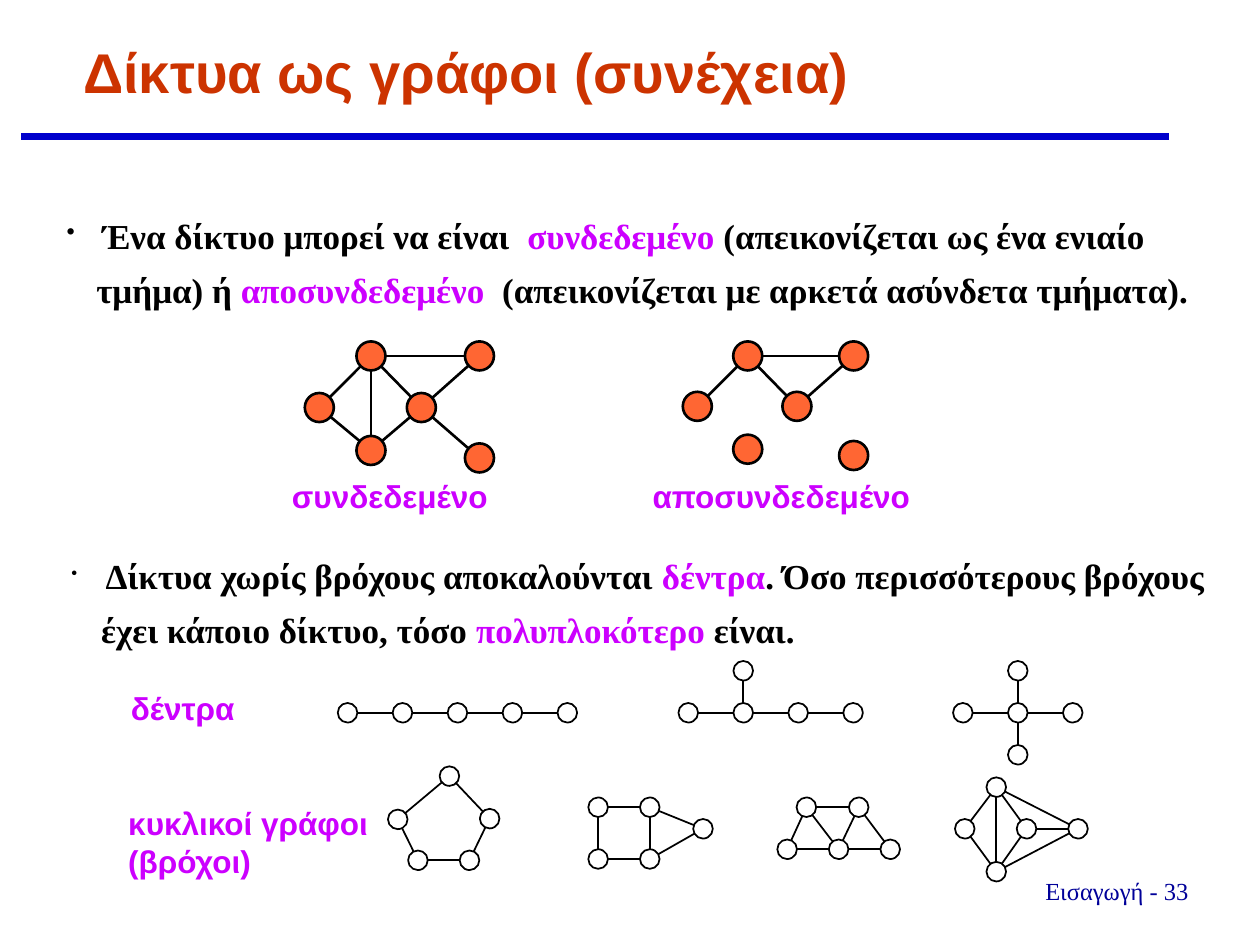
"""Build the slide on networks as graphs."""
import math
from dataclasses import dataclass
from typing import Optional

import pptx
import pptx.dml.color
import pptx.enum.shapes
import pptx.enum.text
import pptx.oxml.ns
import pptx.util
from lxml import etree

Pt = pptx.util.Pt
ALIGN = pptx.enum.text.PP_ALIGN
ANCHOR = pptx.enum.text.MSO_ANCHOR
AUTO_SIZE = pptx.enum.text.MSO_AUTO_SIZE

BLACK, WHITE, ORANGE, MAGENTA = "000000", "FFFFFF", "FF6633", "CC00FF"
SANS, SERIF = "Arial", "Times New Roman"


@dataclass(frozen=True)
class NodeStyle:
    """Look of a graph's nodes and edges."""
    diameter: float
    fill: str
    weight: float


@dataclass(frozen=True)
class Graph:
    """Node centres in points, and edges as pairs of node indexes."""
    style: NodeStyle
    nodes: list[tuple[float, float]]
    edges: list[tuple[int, int]]


@dataclass(frozen=True)
class Caption:
    """A short bold caption beside or below graphs."""
    box: tuple[float, float, float, float]
    lines: str


@dataclass(frozen=True)
class Statement:
    """A bulleted sentence whose phrases alternate black and highlighted."""
    box: tuple[float, float, float, float]
    lead: float
    phrases: list[str]


LARGE = NodeStyle(16.6, ORANGE, 1.5)
SMALL = NodeStyle(11.2, WHITE, 1)
TREE_STEP, BRANCH_STEP, TREE_Y = 31.4, 24, 407.3


def tree(left: float, length: int, branches: list[tuple[int, int]]) -> Graph:
    """Lay out an even row of nodes with branches given as (column, direction)."""
    row = [(left + TREE_STEP * i, TREE_Y) for i in range(length)]
    tips = [(row[column][0], TREE_Y + BRANCH_STEP * way) for column, way in branches]
    chain = [(i, i + 1) for i in range(length - 1)]
    stems = [(column, length + i) for i, (column, _) in enumerate(branches)]
    return Graph(SMALL, row + tips, chain + stems)


CONNECTED = Graph(
    LARGE,
    [(182.5, 232.9), (240.8, 232.9), (212, 203.4), (212, 257.4), (274, 261.7), (274, 203.4)],
    [(0, 2), (2, 5), (0, 3), (2, 3), (3, 1), (2, 1), (1, 5), (1, 4)])
DISCONNECTED = Graph(
    LARGE,
    [(398.5, 232.2), (455.4, 232.2), (427.3, 203.4), (427.3, 256.7), (487.8, 260.3),
     (487.8, 203.4)],
    [(0, 2), (2, 5), (2, 1), (1, 5)])
PENTAGON = Graph(
    SMALL,
    [(238.8, 491.6), (268.3, 491.6), (279.8, 467.8), (256.8, 443.5), (227.3, 468.2)],
    [(i, (i + 1) % 5) for i in range(5)])
HOUSE = Graph(
    SMALL,
    [(341.8, 461.3), (341.8, 490.9), (371.3, 490.9), (371.3, 461.3), (401.7, 473.6)],
    [(0, 1), (1, 2), (2, 3), (3, 0), (3, 4), (2, 4)])
TRAPEZOID = Graph(
    SMALL,
    [(449.8, 485.3), (479.2, 485.3), (508.7, 485.3), (460.8, 461.3), (490.7, 461.3)],
    [(0, 1), (1, 2), (3, 4), (3, 0), (3, 1), (4, 1), (4, 2)])
KITE = Graph(
    SMALL,
    [(551.3, 473.6), (586.6, 473.6), (616, 473.6), (569.3, 449.8), (569.3, 498.1)],
    [(1, 2), (3, 1), (4, 0), (1, 4), (3, 2), (4, 2), (3, 4), (3, 0)])
TREES = [tree(198.6, 5, []), tree(393.3, 4, [(1, -1)]), tree(550.2, 3, [(1, -1), (1, 1)])]
GRAPHS = [CONNECTED, DISCONNECTED, *TREES, PENTAGON, HOUSE, TRAPEZOID, KITE]

CAPTIONS = [
    Caption((159.8, 269.3, 127.4, 28.8), "συνδεδεμένο"),
    Caption((365.8, 269.3, 163.4, 28.8), "αποσυνδεδεμένο"),
    Caption((67.7, 390.2, 77.8, 28.8), "δέντρα"),
    Caption((66.2, 455.8, 152.6, 51.1), "κυκλικοί γράφοι\n(βρόχοι)"),
]
STATEMENTS = [
    Statement((31, 111.6, 689, 70.6), 14, [
        "Ένα δίκτυο μπορεί να είναι  ", "συνδεδεμένο",
        " (απεικονίζεται ως ένα ενιαίο τμήμα) ή ", "αποσυνδεδεμένο  ",
        "(απεικονίζεται με αρκετά ασύνδετα τμήματα)."]),
    Statement((33.8, 306, 669.6, 70.6), 10, [
        "Δίκτυα χωρίς βρόχους αποκαλούνται ", "δέντρα",
        ". Όσο περισσότερους βρόχους έχει κάποιο δίκτυο, τόσο ", "πολυπλοκότερο ",
        "είναι."]),
]


def color(value: str) -> pptx.dml.color.RGBColor:
    """Turn a hex string into a colour."""
    return pptx.dml.color.RGBColor.from_string(value)


def style_run(run, size: float, face: str, shade: str, bold: bool = False) -> None:
    """Format one run."""
    run.font.size, run.font.name, run.font.bold = Pt(size), face, bold
    run.font.color.rgb = color(shade)


def add_edge(slide, start: tuple[float, float], end: tuple[float, float],
             shade: str, weight: float) -> None:
    """Draw a straight line without shadow."""
    edge = slide.shapes.add_connector(
        pptx.enum.shapes.MSO_CONNECTOR.STRAIGHT, *map(Pt, start + end))
    edge.line.color.rgb = color(shade)
    edge.line.width = Pt(weight)
    etree.SubElement(edge._element.spPr, pptx.oxml.ns.qn("a:effectLst"))


def add_graph(slide, graph: Graph) -> None:
    """Draw edges from rim to rim, and the nodes."""
    style = graph.style
    radius = style.diameter / 2
    for first, second in graph.edges:
        (x1, y1), (x2, y2) = graph.nodes[first], graph.nodes[second]
        reach = radius / math.hypot(x2 - x1, y2 - y1)
        dx, dy = (x2 - x1) * reach, (y2 - y1) * reach
        add_edge(slide, (x1 + dx, y1 + dy), (x2 - dx, y2 - dy), BLACK, style.weight)
    for x, y in graph.nodes:
        node = slide.shapes.add_shape(
            pptx.enum.shapes.MSO_SHAPE.OVAL, Pt(x - radius), Pt(y - radius),
            Pt(style.diameter), Pt(style.diameter))
        node.shadow.inherit = False
        node.fill.solid()
        node.fill.fore_color.rgb = color(style.fill)
        node.line.color.rgb = color(BLACK)
        node.line.width = Pt(style.weight)


def add_text(slide, box: tuple[float, float, float, float], wrap: bool, text: str,
             size: float, face: str, shade: str, bold: bool = False,
             align: Optional[ALIGN] = None):
    """Add a text box in one style and return its frame."""
    frame = slide.shapes.add_textbox(*map(Pt, box)).text_frame
    frame.word_wrap = wrap
    frame.auto_size = AUTO_SIZE.SHAPE_TO_FIT_TEXT
    frame.text = text
    for paragraph in frame.paragraphs:
        paragraph.alignment = align
        for run in paragraph.runs:
            style_run(run, size, face, shade, bold)
    return frame


def add_statement(slide, statement: Statement) -> None:
    """Add a bulleted sentence, led in by one em space of the given width."""
    frame = add_text(slide, statement.box, True, " ", statement.lead, SERIF, BLACK)
    paragraph = frame.paragraphs[0]
    paragraph.line_spacing = 1.3
    properties = paragraph._p.get_or_add_pPr()
    properties.set("marL", str(Pt(17)))
    properties.set("indent", str(-Pt(17)))
    etree.SubElement(properties, pptx.oxml.ns.qn("a:buChar"), char="•")
    for i, phrase in enumerate(statement.phrases):
        run = paragraph.add_run()
        run.text = phrase
        style_run(run, 20, SERIF, MAGENTA if i % 2 else BLACK, True)


def add_title(slide, text: str) -> None:
    """Place and format the title with the rule below it."""
    title = slide.shapes.title
    title.left, title.top, title.width, title.height = map(Pt, (40.3, 18, 600.5, 45.4))
    frame = title.text_frame
    frame.text = text
    frame.auto_size = AUTO_SIZE.NONE
    frame.vertical_anchor = ANCHOR.BOTTOM
    frame.paragraphs[0].alignment = ALIGN.LEFT
    style_run(frame.paragraphs[0].runs[0], 32, SANS, "CC3300", True)
    add_edge(slide, (12.2, 78), (668.2, 78), "0000CC", 4)


def main() -> None:
    """Build and save the presentation."""
    deck = pptx.Presentation()
    deck.slide_width, deck.slide_height = Pt(720), Pt(540)
    slide = deck.slides.add_slide(deck.slide_layouts[5])
    add_title(slide, "Δίκτυα ως γράφοι (συνέχεια)")
    add_text(slide, (575.3, 496.8, 126, 23.8), True, "Εισαγωγή - 33", 14, SERIF,
             "000099", align=ALIGN.CENTER)
    for statement in STATEMENTS:
        add_statement(slide, statement)
    for graph in GRAPHS:
        add_graph(slide, graph)
    for caption in CAPTIONS:
        add_text(slide, caption.box, False, caption.lines, 18, SANS, MAGENTA, True)
    deck.save("out.pptx")


if __name__ == "__main__":
    main()
